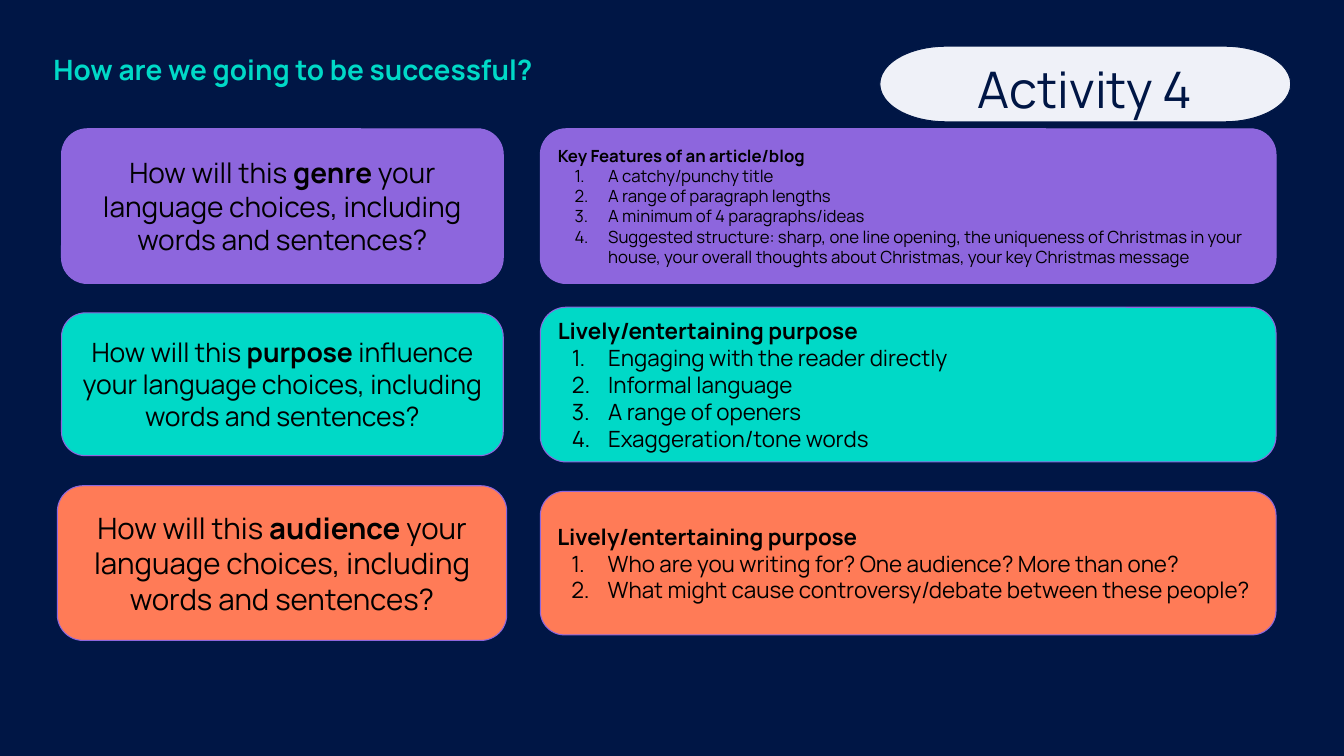
from lxml import etree
from pptx import Presentation
from pptx.dml.color import RGBColor
from pptx.enum.shapes import MSO_SHAPE
from pptx.enum.text import MSO_ANCHOR, MSO_AUTO_SIZE, PP_ALIGN
from pptx.oxml.ns import qn
from pptx.util import Pt

ROUNDED = MSO_SHAPE.ROUNDED_RECTANGLE
TERMINATOR = MSO_SHAPE.FLOWCHART_TERMINATOR
TOP, MIDDLE = MSO_ANCHOR.TOP, MSO_ANCHOR.MIDDLE
LEFT, CENTER = PP_ALIGN.LEFT, PP_ALIGN.CENTER
NO_AUTOFIT = MSO_AUTO_SIZE.NONE

FONT = "Manrope"
NAVY, TEAL, PURPLE, ORANGE = "001645", "00D9C7", "8D66DD", "FF7B57"
PALE, BLACK = "EFF1F8", "000000"

FEATURES_LEFT, FEATURES_WIDTH = 386, 525.5

# colour, (left, top, width, height), size, keyword, rest of the question
QUESTIONS = [
    (PURPLE, (44, 92, 315.5, 110.5), 20, "genre",
     " your language choices, including words and sentences?"),
    (TEAL, (44, 223.5, 315.5, 102), 19, "purpose ",
     "influence your language choices, including words and sentences?"),
    (ORANGE, (41, 347, 321, 110.5), 21, "audience",
     " your language choices, including words and sentences?"),
]

# colour, top, height, size, hanging indent, heading, items
FEATURES = [
    (PURPLE, 92, 110.5, 12, 24, "Key Features of an article/blog", [
        "A catchy/punchy title",
        "A range of paragraph lengths",
        "A minimum of 4 paragraphs/ideas",
        "Suggested structure: sharp, one line opening, the uniqueness of "
        "Christmas in your house, your overall thoughts about Christmas, "
        "your key Christmas message",
    ]),
    (TEAL, 219.5, 110.5, 16, 26, "Lively/entertaining purpose", [
        "Engaging with the reader directly",
        "Informal language",
        "A range of openers",
        "Exaggeration/tone words",
    ]),
    (ORANGE, 351, 102.5, 16, 26, "Lively/entertaining purpose", [
        "Who are you writing for? One audience? More than one?",
        "What might cause controversy/debate between these people?",
    ]),
]


def color(hex_string):
    return RGBColor.from_string(hex_string)


def add_run(paragraph, text, size, text_color=BLACK, bold=False):
    run = paragraph.add_run()
    run.text = text
    run.font.name = FONT
    run.font.size = Pt(size)
    run.font.bold = bold
    run.font.color.rgb = color(text_color)


def add_panel(slide, kind, box, fill, line):
    """Add a filled shape and return its text frame."""
    shape = slide.shapes.add_shape(kind, *(Pt(length) for length in box))
    shape.shadow.inherit = False
    shape.fill.solid()
    shape.fill.fore_color.rgb = color(fill)
    shape.line.color.rgb = color(line)
    shape.line.width = Pt(0.75)
    frame = shape.text_frame
    frame.word_wrap = True
    frame.vertical_anchor = MIDDLE
    frame.margin_left = frame.margin_right = Pt(7.2)
    frame.margin_top = frame.margin_bottom = Pt(7.2)
    return frame


def number_paragraph(paragraph, hanging):
    properties = paragraph._p.get_or_add_pPr()
    properties.set("marL", str(Pt(36)))
    properties.set("indent", str(-Pt(hanging)))
    bullet_color = etree.SubElement(properties, qn("a:buClr"))
    etree.SubElement(bullet_color, qn("a:srgbClr"), val=BLACK)
    etree.SubElement(properties, qn("a:buFont"), typeface=FONT)
    etree.SubElement(properties, qn("a:buAutoNum"), type="arabicPeriod")


def add_title(slide, text):
    title = slide.shapes.title
    title.left, title.top = Pt(38.2), Pt(33)
    title.width, title.height = Pt(441.5), Pt(28)
    frame = title.text_frame
    frame.auto_size = NO_AUTOFIT
    frame.word_wrap = True
    frame.vertical_anchor = TOP
    frame.margin_left = frame.margin_right = 0
    frame.margin_top = frame.margin_bottom = 0
    paragraph = frame.paragraphs[0]
    paragraph.alignment = LEFT
    paragraph.line_spacing = 1.2
    add_run(paragraph, text, 20, TEAL, bold=True)


def add_question(slide, fill, box, size, keyword, rest):
    paragraph = add_panel(slide, ROUNDED, box, fill, PURPLE).paragraphs[0]
    paragraph.alignment = CENTER
    add_run(paragraph, "How will this ", size)
    add_run(paragraph, keyword, size, bold=True)
    add_run(paragraph, rest, size)


def add_features(slide, fill, top, height, size, hanging, heading, items):
    box = (FEATURES_LEFT, top, FEATURES_WIDTH, height)
    frame = add_panel(slide, ROUNDED, box, fill, PURPLE)
    paragraph = frame.paragraphs[0]
    paragraph.alignment = LEFT
    add_run(paragraph, heading, size, bold=True)
    for item in items:
        paragraph = frame.add_paragraph()
        paragraph.alignment = LEFT
        number_paragraph(paragraph, hanging)
        add_run(paragraph, item, size)


def add_activity_label(slide, text):
    box = (628.5, 33, 293.5, 54)
    paragraph = add_panel(slide, TERMINATOR, box, PALE, NAVY).paragraphs[0]
    paragraph.alignment = CENTER
    paragraph.line_spacing = 1.15
    add_run(paragraph, text, 36, NAVY)


def main():
    presentation = Presentation()
    presentation.slide_width, presentation.slide_height = Pt(960), Pt(540)
    slide = presentation.slides.add_slide(presentation.slide_layouts[5])
    slide.background.fill.solid()
    slide.background.fill.fore_color.rgb = color(NAVY)

    add_title(slide, "How are we going to be successful?")
    for question in QUESTIONS:
        add_question(slide, *question)
    for features in FEATURES:
        add_features(slide, *features)
    add_activity_label(slide, "Activity 4")
    presentation.save("out.pptx")


if __name__ == "__main__":
    main()
